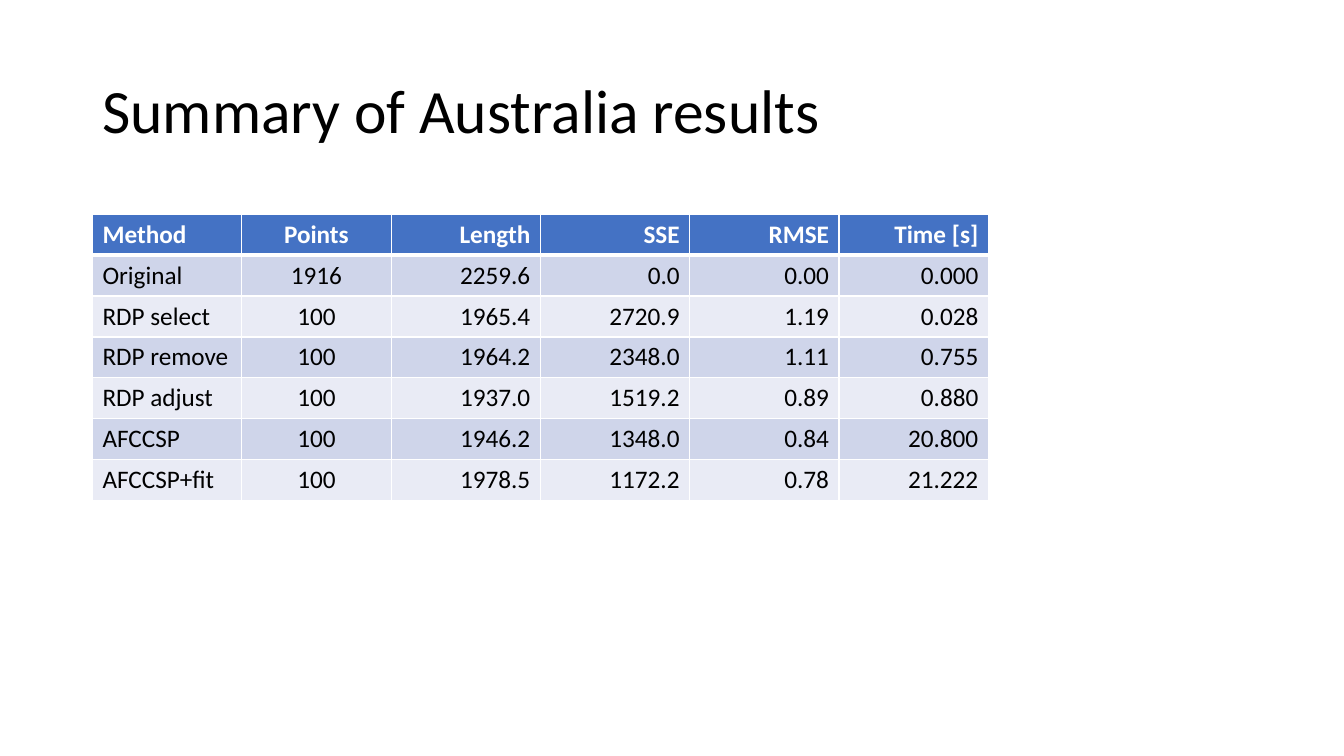
import dataclasses

import lxml.etree
import pptx
import pptx.dml.color
import pptx.enum.text
import pptx.oxml.ns
import pptx.util

Cm = pptx.util.Cm
ALIGN = pptx.enum.text.PP_ALIGN

HEADER = ["Method", "Points", "Length", "SSE", "RMSE", "Time [s]"]
RESULTS = [
    ["Original", "1916", "2259.6", "0.0", "0.00", "0.000"],
    ["RDP select", "100", "1965.4", "2720.9", "1.19", "0.028"],
    ["RDP remove", "100", "1964.2", "2348.0", "1.11", "0.755"],
    ["RDP adjust", "100", "1937.0", "1519.2", "0.89", "0.880"],
    ["AFCCSP", "100", "1946.2", "1348.0", "0.84", "20.800"],
    ["AFCCSP+fit", "100", "1978.5", "1172.2", "0.78", "21.222"],
]
COLUMN_ALIGN = [ALIGN.LEFT, ALIGN.CENTER] + [ALIGN.RIGHT] * 4


@dataclasses.dataclass(frozen=True)
class Theme:
    font: str = "Calibri"
    title_size: int = 44
    table_size: int = 18
    text: str = "000000"
    header_text: str = "FFFFFF"
    header_fill: str = "4472C4"
    band_fills: tuple = ("CFD5EA", "E9EBF5")
    border: str = "FFFFFF"


class SlideBuilder:
    def __init__(self, slide, theme):
        self.slide = slide
        self.theme = theme

    def format_text(self, p, size, color, bold=False):
        for r in p.runs:
            r.font.name = self.theme.font
            r.font.size = pptx.util.Pt(size)
            r.font.bold = bold
            r.font.color.rgb = pptx.dml.color.RGBColor.from_string(color)

    def title(self, text, left, top, width, height):
        sp = self.slide.shapes.add_textbox(Cm(left), Cm(top), Cm(width), Cm(height))
        tf = sp.text_frame
        tf.word_wrap = True
        tf.vertical_anchor = pptx.enum.text.MSO_ANCHOR.MIDDLE
        tf.text = text
        p = tf.paragraphs[0]
        p.line_spacing = 0.9
        self.format_text(p, self.theme.title_size, self.theme.text)

    def borders(self, cell, **widths):
        """Draw cell borders; widths maps the sides L, R, T, B to points."""
        tc_pr = cell._tc.get_or_add_tcPr()
        qn = pptx.oxml.ns.qn
        for side, width in widths.items():
            ln = lxml.etree.SubElement(tc_pr, qn(f"a:ln{side}"), w=str(pptx.util.Pt(width)))
            fill = lxml.etree.SubElement(ln, qn("a:solidFill"))
            lxml.etree.SubElement(fill, qn("a:srgbClr"), val=self.theme.border)

    def cell(self, cell, text, align, row):
        """Fill one table cell; row 0 is the header."""
        theme = self.theme
        header = row == 0
        self.borders(cell, L=1, R=1, T=3 if row == 1 else 1, B=3 if header else 1)
        cell.fill.solid()
        fill = theme.header_fill if header else theme.band_fills[(row - 1) % 2]
        cell.fill.fore_color.rgb = pptx.dml.color.RGBColor.from_string(fill)
        cell.text_frame.text = text
        p = cell.text_frame.paragraphs[0]
        p.alignment = align
        color = theme.header_text if header else theme.text
        self.format_text(p, theme.table_size, color, bold=header)

    def table(self, rows, aligns, left, top, width, row_height):
        table = self.slide.shapes.add_table(
            len(rows), len(aligns), Cm(left), Cm(top), Cm(width), Cm(row_height * len(rows))
        ).table
        for i, values in enumerate(rows):
            for j, (text, align) in enumerate(zip(values, aligns)):
                self.cell(table.cell(i, j), text, align, i)


def main():
    prs = pptx.Presentation()
    prs.slide_width, prs.slide_height = Cm(33.87), Cm(19.05)
    s = SlideBuilder(prs.slides.add_slide(prs.slide_layouts[6]), Theme())
    s.title("Summary of Australia results", 2.33, 1.01, 29.21, 3.68)
    s.table([HEADER] + RESULTS, COLUMN_ALIGN, 2.33, 5.4, 22.58, 1.03)
    prs.save("out.pptx")


if __name__ == "__main__":
    main()
